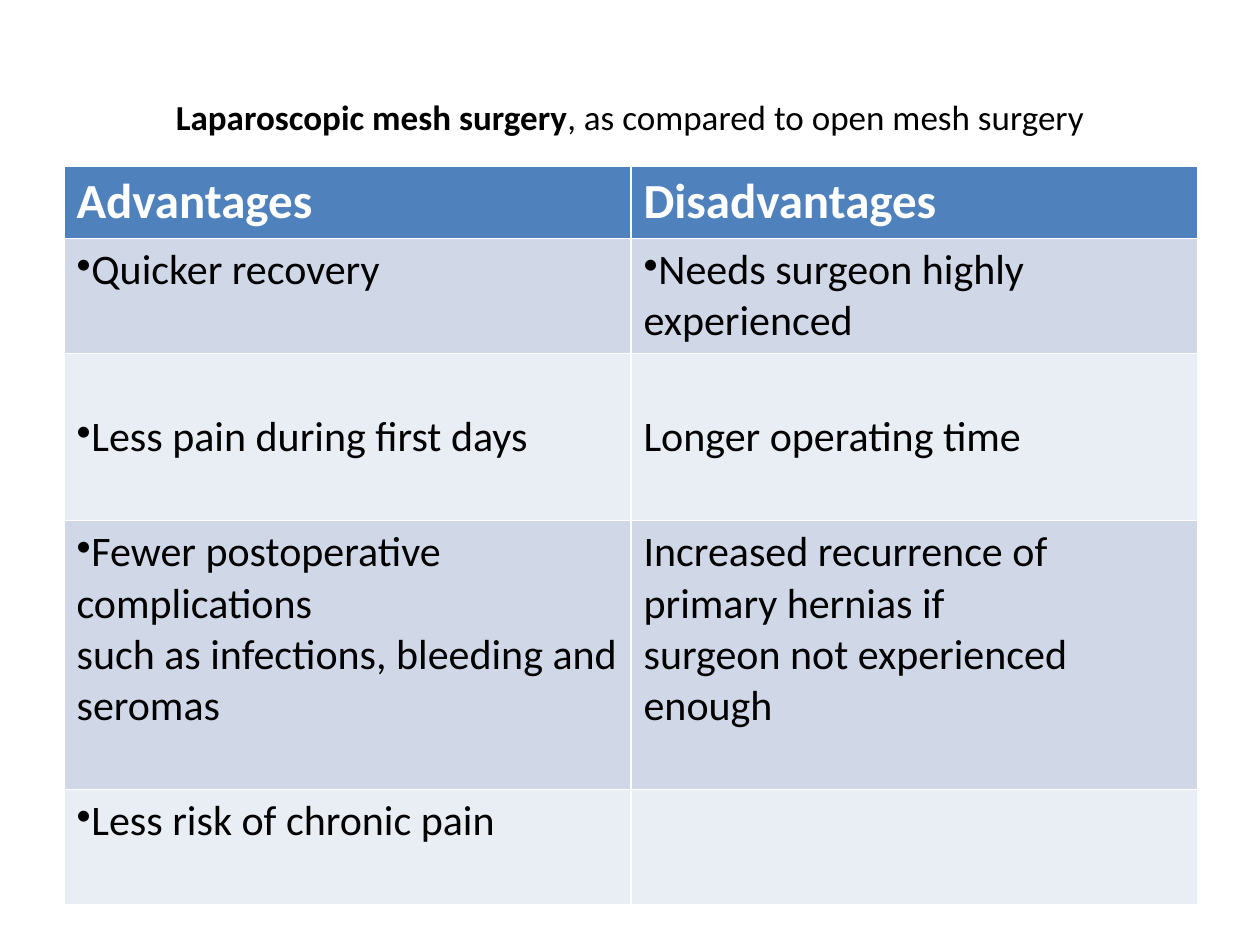
from lxml.etree import SubElement
from pptx import Presentation
from pptx.dml.color import RGBColor
from pptx.enum.text import MSO_ANCHOR, PP_ALIGN
from pptx.oxml.ns import qn
from pptx.util import Pt

PX = 914400 / 126
FONT = "Calibri"
COLORS = {"header": "4F81BD", "odd": "D0D8E8", "even": "E9EDF4",
          "white": "FFFFFF", "black": "000000"}

TITLE = [("Laparoscopic mesh surgery", True),
         (", as compared to open mesh surgery", False)]
HEADINGS = ["Advantages", "Disadvantages"]
# Each cell holds its lines; a leading "•" becomes a real bullet
COMPARISON = [
    (["•Quicker recovery"], ["•Needs surgeon highly experienced"]),
    (["•Less pain during first days"], ["Longer operating time"]),
    (["•Fewer postoperative complications",
      "such as infections, bleeding and seromas"],
     ["Increased recurrence of primary hernias if",
      "surgeon not experienced enough"]),
    (["•Less risk of chronic pain"], [""]),
]
ROW_HEIGHTS = [71, 115, 167, 269, 115]
CENTERED_ROW = 2


def emu(px):
    return round(px * PX)


def color(name):
    return RGBColor.from_string(COLORS[name])


def style(paragraph, size, ink, bold=None):
    font = paragraph.font
    font.name, font.size, font.bold = FONT, Pt(size), bold
    font.color.rgb = color(ink)


def add_bullet(paragraph):
    properties = paragraph._p.get_or_add_pPr()
    SubElement(properties, qn("a:buChar"), char="•")


def place_title(slide, left, top, width, height):
    title = slide.shapes.title
    title.left, title.top = emu(left), emu(top)
    title.width, title.height = emu(width), emu(height)
    title.text_frame.vertical_anchor = MSO_ANCHOR.MIDDLE
    heading = title.text_frame.paragraphs[0]
    heading.alignment = PP_ALIGN.CENTER
    style(heading, 20, "black")
    for text, bold in TITLE:
        run = heading.add_run()
        run.text, run.font.bold = text, bold


def fill_cell(cell, lines, background, size, ink, bold):
    cell.fill.solid()
    cell.fill.fore_color.rgb = color(background)
    cell.text = "\n".join(line.removeprefix("•") for line in lines)
    for paragraph, line in zip(cell.text_frame.paragraphs, lines):
        if line.startswith("•"):
            add_bullet(paragraph)
        style(paragraph, size, ink, bold)


def place_comparison(slide, left, top, width):
    rows = [[[heading] for heading in HEADINGS], *COMPARISON]
    table = slide.shapes.add_table(
        len(rows), len(HEADINGS), emu(left), emu(top),
        emu(width), emu(sum(ROW_HEIGHTS))).table
    for row, height in zip(table.rows, ROW_HEIGHTS):
        row.height = emu(height)

    for r, cells in enumerate(rows):
        for c, lines in enumerate(cells):
            cell = table.cell(r, c)
            if r == 0:
                fill_cell(cell, lines, "header", 28, "white", True)
            else:
                band = "odd" if r % 2 else "even"
                fill_cell(cell, lines, band, 24, "black", False)
            if r == CENTERED_ROW:
                cell.vertical_anchor = MSO_ANCHOR.MIDDLE


def main():
    deck = Presentation()
    deck.slide_width, deck.slide_height = emu(1260), emu(945)
    slide = deck.slides.add_slide(deck.slide_layouts[5])
    place_title(slide, 63, 38, 1134, 157)
    place_comparison(slide, 64, 166, 1134)
    deck.save("out.pptx")


if __name__ == "__main__":
    main()
